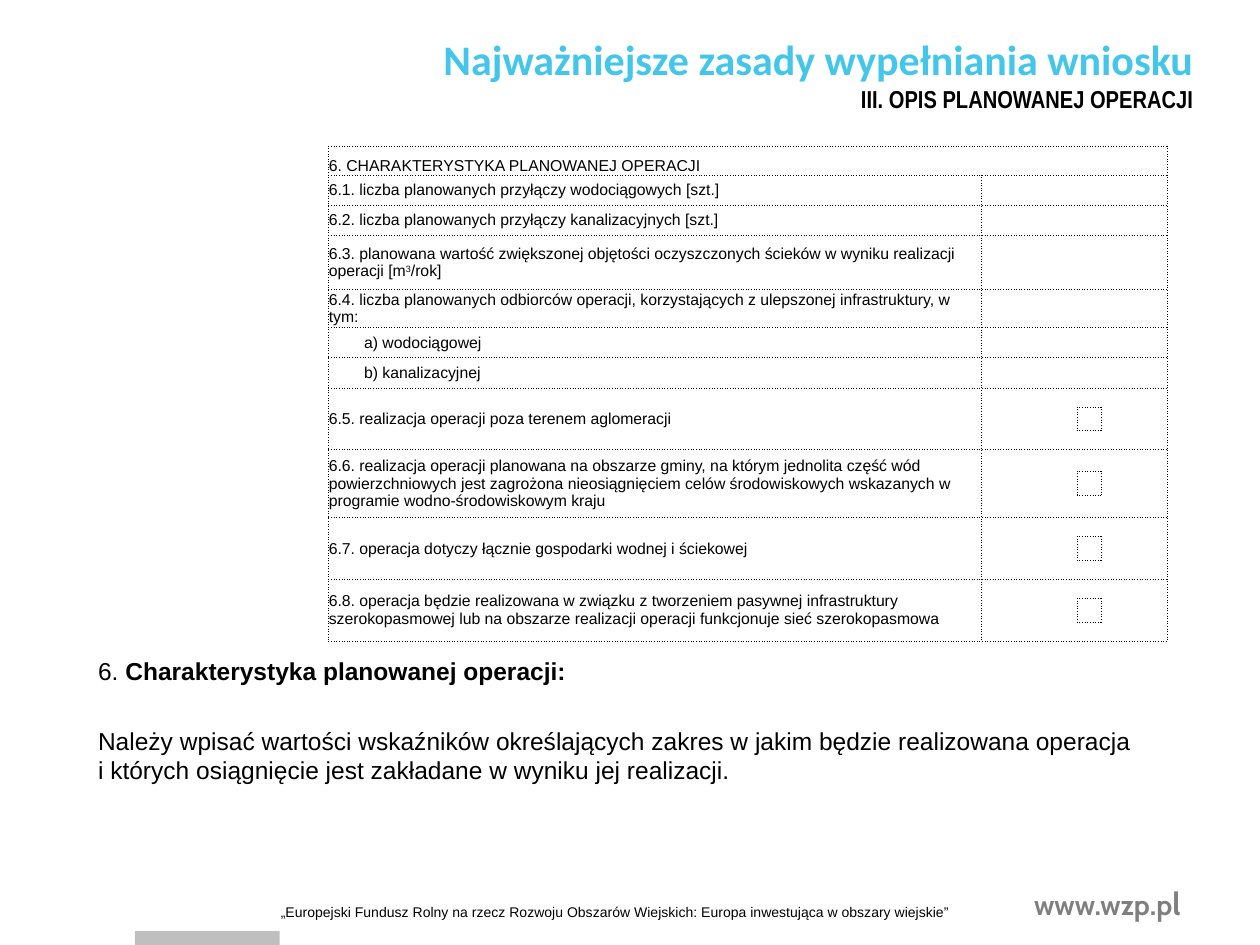
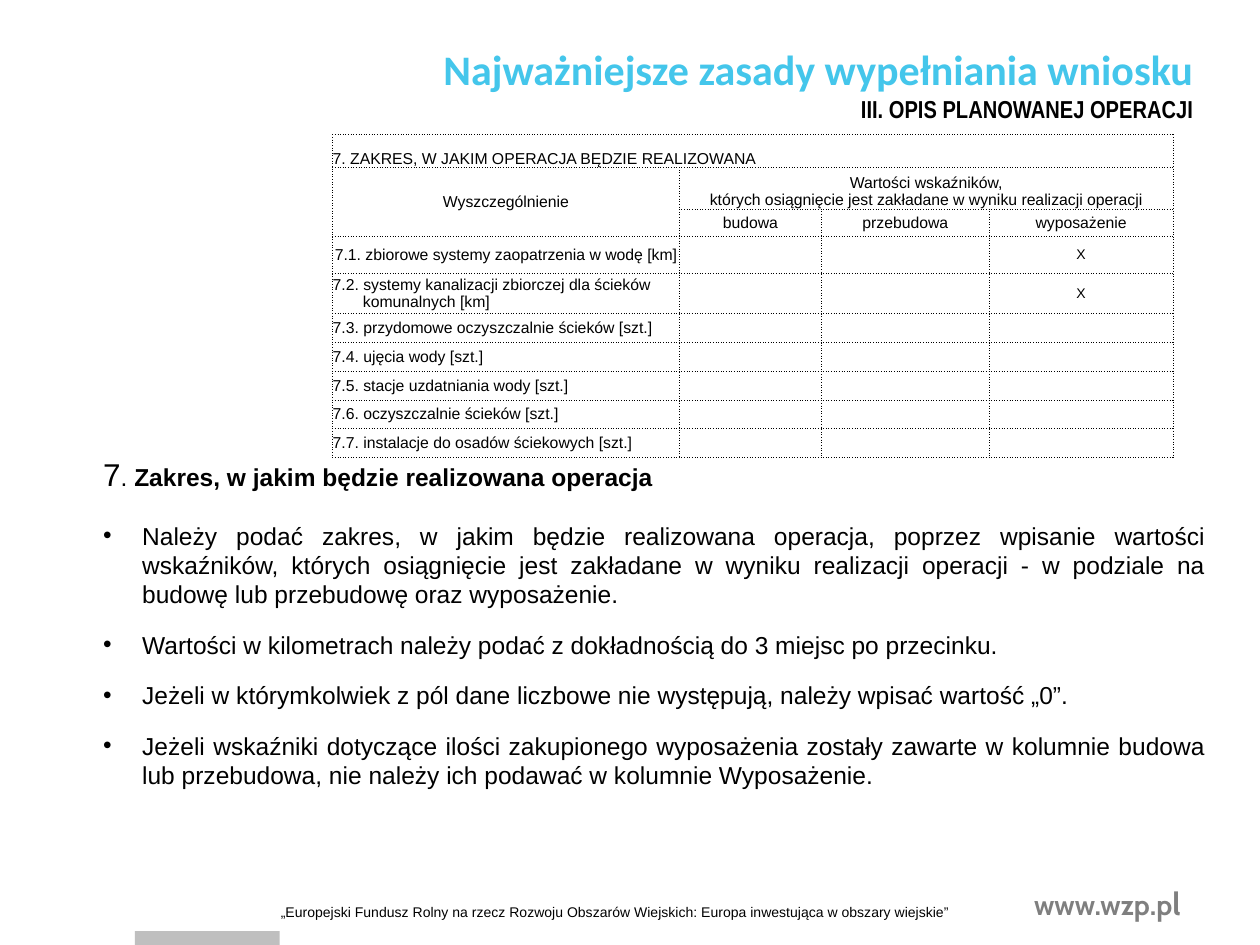
from lxml.etree import SubElement
from pptx import Presentation
from pptx.dml.color import RGBColor
from pptx.enum.shapes import MSO_SHAPE
from pptx.enum.text import MSO_ANCHOR, PP_ALIGN
from pptx.oxml.ns import qn
from pptx.util import Inches, Pt

COLORS = {"title": "44C6EB", "text": "000000", "url": "7F7F7F", "bar": "BFBFBF", "cell": "FFFFFF"}
SIDES = {"l": "a:lnL", "r": "a:lnR", "t": "a:lnT", "b": "a:lnB"}


def rgb(name):
    return RGBColor.from_string(COLORS[name])


def write(p, text, size=14, font="Arial", color="text", bold=False, sup=False):
    for i, line in enumerate(text.split("\n")):
        if i:
            p.add_line_break()
        r = p.add_run()
        r.text = line
        r.font.size, r.font.name, r.font.bold = Pt(size), font, bold
        r.font.color.rgb = rgb(color)
        if sup:
            r.font._element.set("baseline", "30000")


def set_indent(p, left, first=0):
    pPr = p._p.get_or_add_pPr()
    pPr.set("marL", str(Inches(left)))
    pPr.set("indent", str(Inches(first)))
    return pPr


def add_box(s, left, top, width, height):
    tf = s.shapes.add_textbox(Inches(left), Inches(top), Inches(width), Inches(height)).text_frame
    tf.word_wrap = True
    return tf


def add_title(s, top):
    tf = add_box(s, 3.15, top, 6.42, 1.14)
    p = tf.paragraphs[0]
    write(p, "Najważniejsze zasady wypełniania wniosku", size=24, font="Calibri", color="title", bold=True)
    subtitle = tf.add_paragraph()
    write(subtitle, "III. OPIS PLANOWANEJ OPERACJI", font="Arial Narrow", bold=True)
    p.alignment = subtitle.alignment = PP_ALIGN.RIGHT


def add_footer(s):
    sp = s.shapes.add_shape(MSO_SHAPE.RECTANGLE, Inches(1.07), Inches(7.39), Inches(1.15), Inches(0.11))
    sp.shadow.inherit = False
    sp.fill.solid()
    sp.fill.fore_color.rgb = rgb("bar")
    sp.line.fill.background()
    p = add_box(s, 8.11, 6.97, 1.49, 0.4).paragraphs[0]
    write(p, "www.wzp.p", size=16, font="Cabin", color="url", bold=True)
    write(p, "l", size=18, font="Cabin", color="url", bold=True)
    p = add_box(s, 2.13, 7.12, 7.08, 0.24).paragraphs[0]
    write(p, "„Europejski Fundusz Rolny na rzecz Rozwoju Obszarów Wiejskich: "
             "Europa inwestująca w obszary wiejskie”", size=8)


def set_borders(cell, visible="lrtb"):
    tcPr = cell._tc.get_or_add_tcPr()
    for old in list(tcPr):
        tcPr.remove(old)
    for side, tag in SIDES.items():
        ln = SubElement(tcPr, qn(tag), w=str(Pt(0.5)))
        if side in visible:
            fill = SubElement(ln, qn("a:solidFill"))
            SubElement(fill, qn("a:srgbClr"), val=COLORS["text"])
            SubElement(ln, qn("a:prstDash"), val="sysDot")
        else:
            SubElement(ln, qn("a:noFill"))
    cell.fill.solid()
    cell.fill.fore_color.rgb = rgb("cell")


def add_form(s, left, top, cols, rows):
    frame = s.shapes.add_table(len(rows), len(cols), Inches(left), Inches(top),
                               Inches(sum(cols)), Inches(sum(rows)))
    table = frame.table
    table.first_row = table.horz_banding = False
    for col, width in zip(table.columns, cols):
        col.width = Inches(width)
    for row, height in zip(table.rows, rows):
        row.height = Inches(height)
    for cell in table.iter_cells():
        cell.margin_left = cell.margin_right = cell.margin_top = cell.margin_bottom = 0
        set_borders(cell)
        cell.vertical_anchor = MSO_ANCHOR.MIDDLE
        SubElement(cell.text_frame.paragraphs[0]._p, qn("a:endParaRPr"), sz="600")
    return table


def fill_cell(table, row, col, text, size=9, center=False, span=(1, 1)):
    cell = table.cell(row, col)
    if span != (1, 1):
        cell.merge(table.cell(row + span[0] - 1, col + span[1] - 1))
    p = cell.text_frame.paragraphs[0]
    if center:
        p.alignment = PP_ALIGN.CENTER
    for i, part in enumerate(text.split("^")):
        write(p, part, size=size, sup=i == 1)
    return cell


def checkbox_edges(row, col):
    rules = {"l": col == 1 or (row == 1 and col in (5, 6)),
             "r": col == 8 or (row == 1 and col in (4, 5)),
             "t": row == 0 or col == 5,
             "b": row == 2 or col == 5}
    return "".join(side for side, shown in rules.items() if shown)


def add_characteristics_table(s, left, top):
    values = [
        "6.1. liczba planowanych przyłączy wodociągowych [szt.]",
        "6.2. liczba planowanych przyłączy kanalizacyjnych [szt.]",
        "6.3. planowana wartość zwiększonej objętości oczyszczonych ścieków w wyniku realizacji operacji [m^3^/rok]",
        "6.4. liczba planowanych odbiorców operacji, korzystających z ulepszonej infrastruktury, w tym:",
        "a) wodociągowej",
        "b) kanalizacyjnej",
    ]
    checks = [
        "6.5. realizacja operacji poza terenem aglomeracji",
        "6.6. realizacja operacji planowana na obszarze gminy, na którym jednolita część wód powierzchniowych "
        "jest zagrożona nieosiągnięciem celów środowiskowych wskazanych w programie wodno-środowiskowym kraju",
        "6.7. operacja dotyczy łącznie gospodarki wodnej i ściekowej",
        "6.8. operacja będzie realizowana w związku z tworzeniem pasywnej infrastruktury szerokopasmowej "
        "lub na obszarze realizacji operacji funkcjonuje sieć szerokopasmowa",
    ]
    check_rows = [0.15, 0.19, 0.15]
    rows = [0.23, 0.24, 0.24, 0.43, 0.3, 0.24, 0.24] + check_rows + [0.17, 0.19, 0.18] + check_rows * 2
    table = add_form(s, left, top, [5.18] + [0.19] * 7 + [0.15], rows)
    header = fill_cell(table, 0, 0, "6. CHARAKTERYSTYKA PLANOWANEJ OPERACJI", span=(1, 9))
    header.vertical_anchor = MSO_ANCHOR.BOTTOM
    for i, text in enumerate(values, 1):
        cell = fill_cell(table, i, 0, text)
        if text[1] == ")":
            set_indent(cell.text_frame.paragraphs[0], 0.28)
        table.cell(i, 1).merge(table.cell(i, 8))
    for i, text in enumerate(checks):
        first = 7 + 3 * i
        fill_cell(table, first, 0, text, span=(3, 1))
        for row in range(3):
            for col in range(1, 9):
                set_borders(table.cell(first + row, col), checkbox_edges(row, col))


def add_scope_table(s, left, top):
    labels = [
        "7.1. zbiorowe systemy zaopatrzenia w wodę [km]",
        "7.2. systemy kanalizacji zbiorczej dla ścieków\nkomunalnych [km]",
        "7.3. przydomowe oczyszczalnie ścieków [szt.]",
        "7.4. ujęcia wody [szt.]",
        "7.5. stacje uzdatniania wody [szt.]",
        "7.6. oczyszczalnie ścieków [szt.]",
        "7.7. instalacje do osadów ściekowych [szt.]",
    ]
    table = add_form(s, left, top, [2.75, 1.13, 1.33, 1.46],
                     [0.26, 0.33, 0.22, 0.29, 0.32] + [0.23] * 3 + [0.22, 0.23])
    header = fill_cell(table, 0, 0, "7. ZAKRES, W JAKIM OPERACJA BĘDZIE REALIZOWANA", span=(1, 4))
    fill_cell(table, 1, 0, "Wyszczególnienie", center=True, span=(2, 1))
    group = fill_cell(table, 1, 1, "Wartości wskaźników,\nktórych osiągnięcie jest zakładane "
                                   "w wyniku realizacji operacji", center=True, span=(1, 3))
    header.vertical_anchor = group.vertical_anchor = MSO_ANCHOR.BOTTOM
    for col, text in enumerate(["budowa", "przebudowa", "wyposażenie"], 1):
        fill_cell(table, 2, col, text, center=True)
    for i, text in enumerate(labels):
        cell = fill_cell(table, 3 + i, 0, text, center=i == 0)
        if "\n" in text:
            set_indent(cell.text_frame.paragraphs[0], 0.24, -0.24)
        if i < 2:
            fill_cell(table, 3 + i, 3, "X", size=8, center=True)


def add_characteristics_notes(s, left, top):
    tf = add_box(s, left, top, 9, 1.13)
    p = tf.paragraphs[0]
    write(p, "6. ")
    write(p, "Charakterystyka planowanej operacji:", bold=True)
    p = tf.add_paragraph()
    p.space_before = Pt(23)
    write(p, "Należy wpisać wartości wskaźników określających zakres w jakim będzie realizowana operacja\n"
             "i których osiągnięcie jest zakładane w wyniku jej realizacji.")


def add_scope_notes(s, left, top):
    notes = [
        "Należy podać zakres, w jakim będzie realizowana operacja, poprzez wpisanie wartości wskaźników, "
        "których osiągnięcie jest zakładane w wyniku realizacji operacji - w podziale na budowę "
        "lub przebudowę oraz wyposażenie.",
        "Wartości w kilometrach należy podać z dokładnością do 3 miejsc po przecinku.",
        "Jeżeli w którymkolwiek z pól dane liczbowe nie występują, należy wpisać wartość „0”.",
        "Jeżeli wskaźniki dotyczące ilości zakupionego wyposażenia zostały zawarte w kolumnie budowa "
        "lub przebudowa, nie należy ich podawać w kolumnie Wyposażenie.",
    ]
    tf = add_box(s, left, top, 8.95, 2.79)
    p = tf.paragraphs[0]
    p.space_after = Pt(16)
    write(p, "7", size=18)
    write(p, ". ")
    write(p, "Zakres, w jakim będzie realizowana operacja", bold=True)
    for text in notes:
        p = tf.add_paragraph()
        p.alignment = PP_ALIGN.JUSTIFY
        pPr = set_indent(p, 0.31, -0.31)
        SubElement(pPr, qn("a:buFont"), typeface="Arial")
        SubElement(pPr, qn("a:buChar"), char="•")
        p.space_after = Pt(12)
        write(p, text)


def add_slide(prs, title_top):
    s = prs.slides.add_slide(prs.slide_layouts[6])
    add_footer(s)
    add_title(s, title_top)
    return s


def main():
    prs = Presentation()
    prs.slide_width, prs.slide_height = Inches(10), Inches(7.5)
    s = add_slide(prs, 0.22)
    add_characteristics_notes(s, 0.68, 5.16)
    add_characteristics_table(s, 2.61, 1.16)
    s = add_slide(prs, 0.3)
    add_scope_notes(s, 0.72, 3.56)
    add_scope_table(s, 2.64, 1.07)
    prs.save("out.pptx")


if __name__ == "__main__":
    main()
